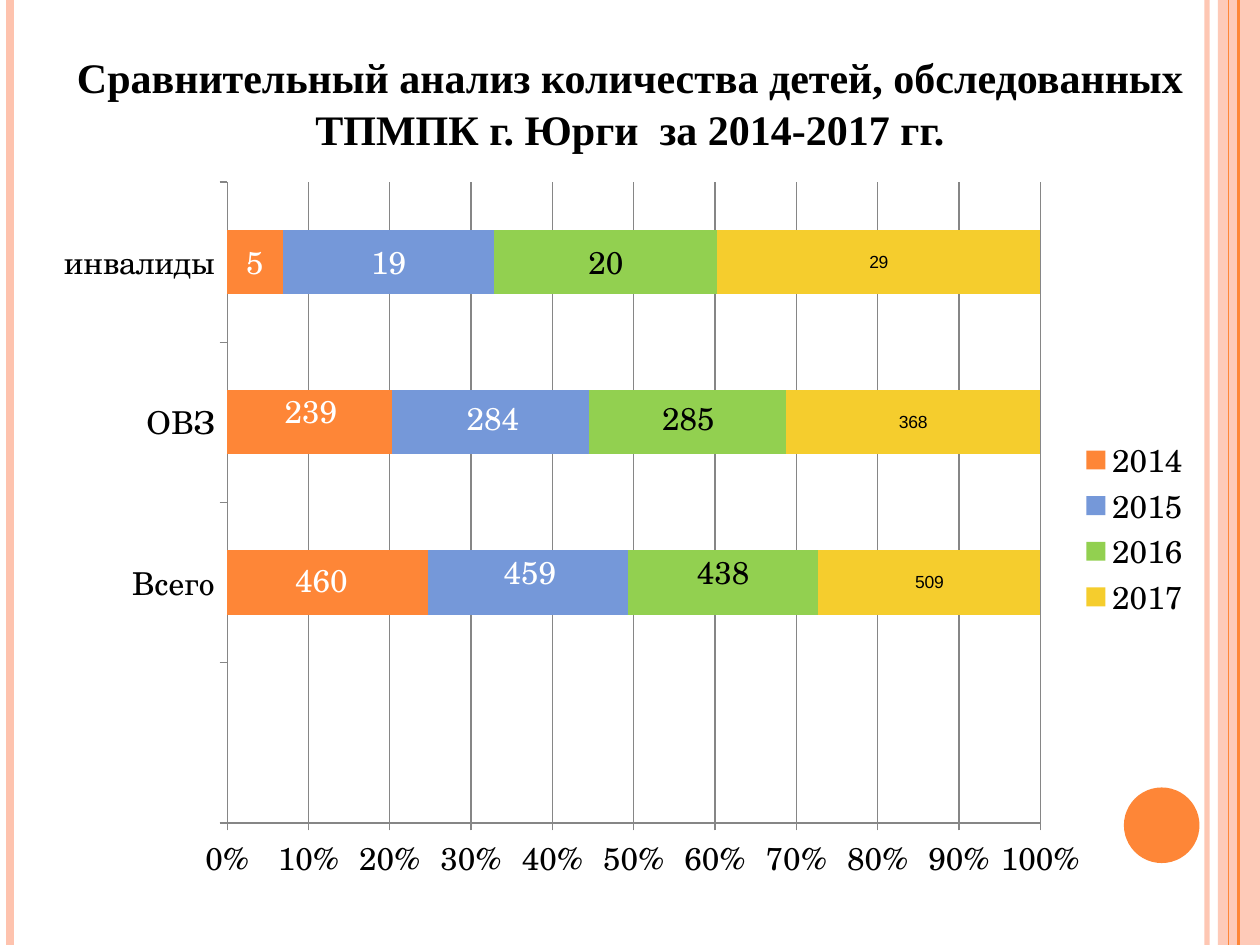
import pptx
import pptx.chart.data
import pptx.dml.color
import pptx.enum.chart
import pptx.enum.shapes
import pptx.enum.text
import pptx.oxml
import pptx.oxml.ns
import pptx.util
from lxml import etree

Pt = pptx.util.Pt
qn = pptx.oxml.ns.qn
COLORS = {
    "pale": "FEC3AE", "orange": "FE8637", "blue": "7598D9", "green": "92D050",
    "yellow": "F5CD2D", "black": "000000", "white": "FFFFFF", "gray": "868686",
}
CHART_FONT = "TeX Gyre Schola"
TITLE = "Сравнительный анализ количества детей, обследованных ТПМПК г. Юрги  за 2014-2017 гг."
CATEGORIES = ["", "Всего", "ОВЗ", "инвалиды"]
SERIES = [
    ("2014", (None, 460, 239, 5), "orange", "white", 18, CHART_FONT),
    ("2015", (None, 459, 284, 19), "blue", "white", 18, CHART_FONT),
    ("2016", (None, 438, 285, 20), "green", "black", 18, CHART_FONT),
    ("2017", (None, 509, 368, 29), "yellow", "black", 10, "Arial"),
]
LABEL_SHIFTS = {
    ("2014", 1): (-0.005, -0.003), ("2014", 2): (0.001, -0.015),
    ("2015", 1): (0.002, -0.015), ("2015", 2): (0.002, -0.006),
    ("2016", 1): (0, -0.015), ("2016", 2): (0.001, -0.006),
}
STRIPES = [
    (689.76, 3, "pale", 93), (5.76, 4.5, "pale", 100),
    (707.76, 1.5, "orange", 100), (702, 0.75, "orange", 100),
]


def rgb(name):
    return pptx.dml.color.RGBColor.from_string(COLORS[name])


def paint(fill, color, opacity=100):
    fill.solid()
    fill.fore_color.rgb = rgb(color)
    if opacity < 100:
        for node in fill._xPr.iter(qn("a:srgbClr")):
            etree.SubElement(node, qn("a:alpha")).set("val", str(opacity * 1000))


def style_font(font, size, color, name):
    font.size = Pt(size)
    font.name = name
    font.color.rgb = rgb(color)


def add_stripe(page, x, width, color, opacity):
    stripe = page.shapes.add_connector(
        pptx.enum.shapes.MSO_CONNECTOR.STRAIGHT, Pt(x), Pt(0), Pt(x), Pt(540))
    stripe.line.width = Pt(width)
    paint(stripe.line.fill, color, opacity)
    etree.SubElement(stripe._element.spPr, qn("a:effectLst"))


def add_plain_shape(page, kind, bounds, color, opacity=100):
    shape = page.shapes.add_shape(kind, *map(Pt, bounds))
    shape.shadow.inherit = False
    paint(shape.fill, color, opacity)
    shape.line.fill.background()


def add_title(page):
    box = page.shapes.title
    box.left, box.top, box.width, box.height = Pt(0), Pt(26), Pt(720), Pt(64)
    frame = box.text_frame
    frame.text = TITLE
    frame.word_wrap = True
    frame.auto_size = pptx.enum.text.MSO_AUTO_SIZE.NONE
    frame.vertical_anchor = pptx.enum.text.MSO_ANCHOR.MIDDLE
    para = frame.paragraphs[0]
    para.alignment = pptx.enum.text.PP_ALIGN.CENTER
    para.line_spacing = 1.05
    style_font(para.font, 24, "black", "Times New Roman")
    para.font.bold = True


def make_layout(**values):
    layout = etree.Element(qn("c:layout"))
    manual = etree.SubElement(layout, qn("c:manualLayout"))
    for tag, value in values.items():
        etree.SubElement(manual, qn(f"c:{tag}")).set("val", str(value))
    return layout


def place(parent, position, layout):
    for old in parent.findall(qn("c:layout")):
        parent.remove(old)
    parent.insert(position, layout)


def style_axis(axis):
    axis.major_tick_mark = pptx.enum.chart.XL_TICK_MARK.OUTSIDE
    axis.format.line.width = Pt(0.75)
    axis.format.line.color.rgb = rgb("gray")
    style_font(axis.tick_labels.font, 18, "black", CHART_FONT)


def style_series(series, name, values, color, text_color, size, font):
    paint(series.format.fill, color)
    labels = series.data_labels
    labels.show_value = True
    style_font(labels.font, size, text_color, font)
    for index in range(len(values)):
        shift = LABEL_SHIFTS.get((name, index))
        if shift:
            label = series.points[index].data_label
            style_font(label.font, size, text_color, font)
            node = labels._element.find(f"{qn('c:dLbl')}[{qn('c:idx')}][@val]")
            node = next(item for item in labels._element.findall(qn("c:dLbl"))
                        if item.find(qn("c:idx")).get("val") == str(index))
            place(node, 1, make_layout(x=shift[0], y=shift[1]))


def add_chart(page):
    data = pptx.chart.data.CategoryChartData()
    data.categories = CATEGORIES
    for name, values, *style in SERIES:
        data.add_series(name, values)
    chart = page.shapes.add_chart(
        pptx.enum.chart.XL_CHART_TYPE.BAR_STACKED_100,
        Pt(22.32), Pt(95.76), Pt(680.4), Pt(416.16), data).chart
    chart.has_title = False
    style_font(chart.font, 18, "black", CHART_FONT)
    plot = chart.plots[0]
    plot.gap_width = 150
    plot.overlap = 100
    plot.vary_by_categories = False
    for series, row in zip(plot.series, SERIES):
        style_series(series, *row)
    style_axis(chart.category_axis)
    style_axis(chart.value_axis)
    chart.value_axis.tick_labels.number_format = "0%"
    chart.value_axis.tick_labels.number_format_is_linked = False
    chart.value_axis.has_major_gridlines = True
    grid = chart.value_axis.major_gridlines.format.line
    grid.width = Pt(0.75)
    grid.color.rgb = rgb("gray")
    place(chart._chartSpace.chart.plotArea, 0, make_layout(
        layoutTarget="inner", xMode="edge", yMode="edge", x=0.158, y=0.02, w=0.683, h=0.88))
    chart.has_legend = True
    legend = chart.legend
    legend.position = pptx.enum.chart.XL_LEGEND_POSITION.RIGHT
    legend.include_in_layout = False
    style_font(legend.font, 18, "black", CHART_FONT)
    place(legend._element, 1, make_layout(
        xMode="edge", yMode="edge", x=0.87, y=0.37, w=0.1, h=0.25))


def main():
    deck = pptx.Presentation()
    deck.slide_width, deck.slide_height = Pt(720), Pt(540)
    page = deck.slides.add_slide(deck.slide_layouts[5])
    kinds = pptx.enum.shapes.MSO_SHAPE
    add_plain_shape(page, kinds.RECTANGLE, (696, 0, 24, 540), "pale", 87)
    for stripe in STRIPES:
        add_stripe(page, *stripe)
    add_plain_shape(page, kinds.OVAL, (642.24, 450, 43.2, 43.2), "orange")
    add_chart(page)
    add_title(page)
    deck.save("out.pptx")


if __name__ == "__main__":
    main()
